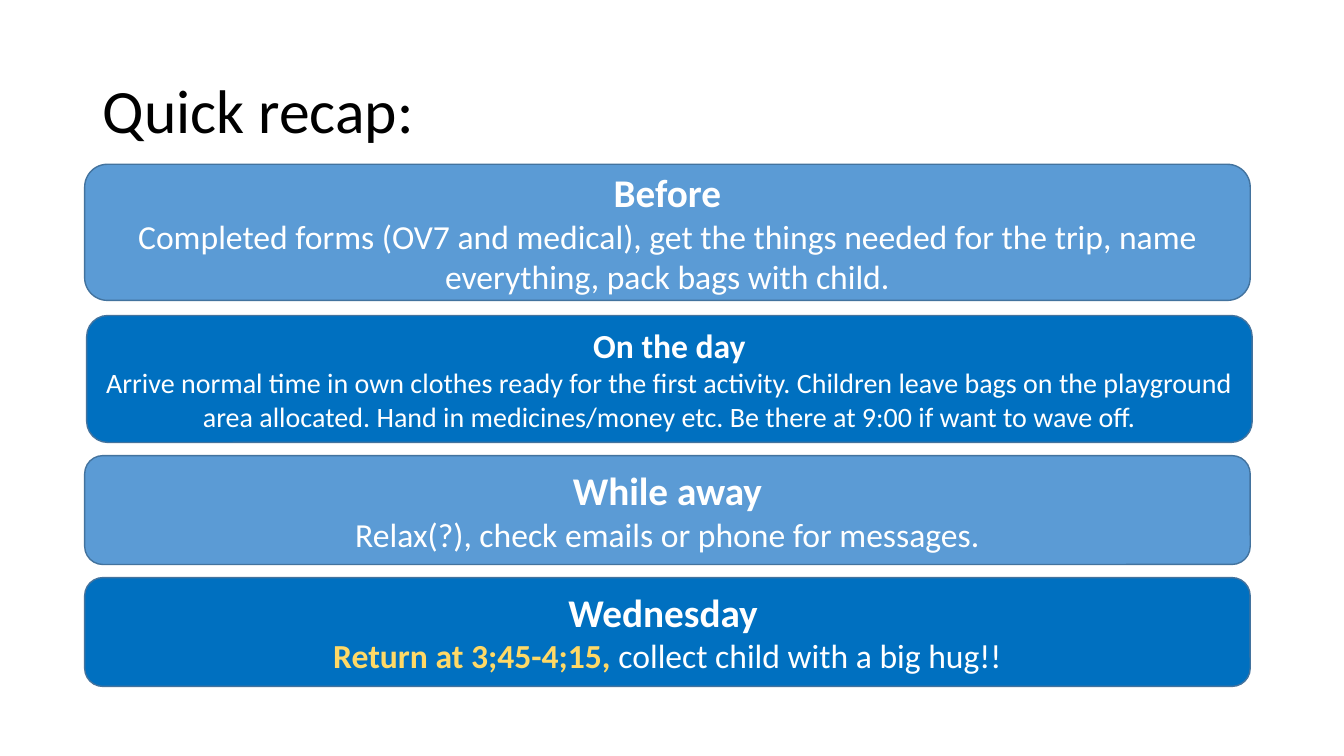
import pptx
import pptx.dml.color
import pptx.enum.shapes
import pptx.enum.text
import pptx.util

Inches = pptx.util.Inches
Align = pptx.enum.text.PP_ALIGN

LIGHT_BLUE = "5B9BD5"
DARK_BLUE = "0070C0"
OUTLINE = "43739E"
WHITE = "FFFFFF"
YELLOW = "FFD966"


def color(hex_string):
    return pptx.dml.color.RGBColor.from_string(hex_string)


def add_text(paragraph, text, *, size, fill=WHITE, bold=False, font="Calibri"):
    """Append one formatted run to the paragraph."""
    run = paragraph.add_run()
    run.text = text
    run.font.name = font
    run.font.size = pptx.util.Pt(size)
    run.font.bold = bold
    run.font.color.rgb = color(fill)


class RecapSlide:
    def __init__(self, presentation):
        self.slide = presentation.slides.add_slide(presentation.slide_layouts[6])

    def prepare_frame(self, shape):
        frame = shape.text_frame
        frame.word_wrap = True
        frame.vertical_anchor = pptx.enum.text.MSO_ANCHOR.MIDDLE
        return frame

    def title(self, text, left, top, width, height):
        box = self.slide.shapes.add_textbox(
            Inches(left), Inches(top), Inches(width), Inches(height))
        paragraph = self.prepare_frame(box).paragraphs[0]
        paragraph.line_spacing = 0.9
        add_text(paragraph, text, size=44, fill="000000")

    def panel(self, left, top, width, height, fill, heading, heading_size, body):
        """Add a rounded panel; body is a list of (text, format) pairs."""
        shape = self.slide.shapes.add_shape(
            pptx.enum.shapes.MSO_SHAPE.ROUNDED_RECTANGLE,
            Inches(left), Inches(top), Inches(width), Inches(height))
        shape.shadow.inherit = False
        shape.fill.solid()
        shape.fill.fore_color.rgb = color(fill)
        shape.line.color.rgb = color(OUTLINE)
        shape.line.width = pptx.util.Pt(1)

        frame = self.prepare_frame(shape)
        heading_paragraph = frame.paragraphs[0]
        body_paragraph = frame.add_paragraph()
        heading_paragraph.alignment = body_paragraph.alignment = Align.CENTER
        add_text(heading_paragraph, heading, size=heading_size, bold=True)
        for text, text_format in body:
            add_text(body_paragraph, text, size=heading_size - 4, **text_format)


def main():
    presentation = pptx.Presentation()
    presentation.slide_width = Inches(13.33)
    presentation.slide_height = Inches(7.5)

    recap = RecapSlide(presentation)
    recap.title("Quick recap:", 0.92, 0.4, 11.5, 1.45)

    panels = [
        (0.84, 1.63, 1.35, "Before", 28, [
            ("Completed forms (OV7 and medical), get the things needed for the "
             "trip, name everything, pack bags with child.", {})]),
        (0.86, 3.13, 1.26, "On the day", 24, [
            ("Arrive normal time in own clothes ready for the first activity. "
             "Children leave bags on the playground area allocated. Hand in "
             "medicines/money etc. Be there at 9:00 if want to wave off.", {})]),
        (0.84, 4.52, 1.08, "While away", 28, [
            ("Relax(?), check emails or phone for messages.", {})]),
        (0.84, 5.73, 1.08, "Wednesday ", 28, [
            ("Return at 3;45-4;15, ", {"fill": YELLOW, "bold": True}),
            ("collect child with a big hug!!", {})]),
    ]
    for index, (left, top, height, heading, size, body) in enumerate(panels):
        fill = DARK_BLUE if index % 2 else LIGHT_BLUE
        recap.panel(left, top, 11.56, height, fill, heading, size, body)

    presentation.save("out.pptx")


if __name__ == "__main__":
    main()
